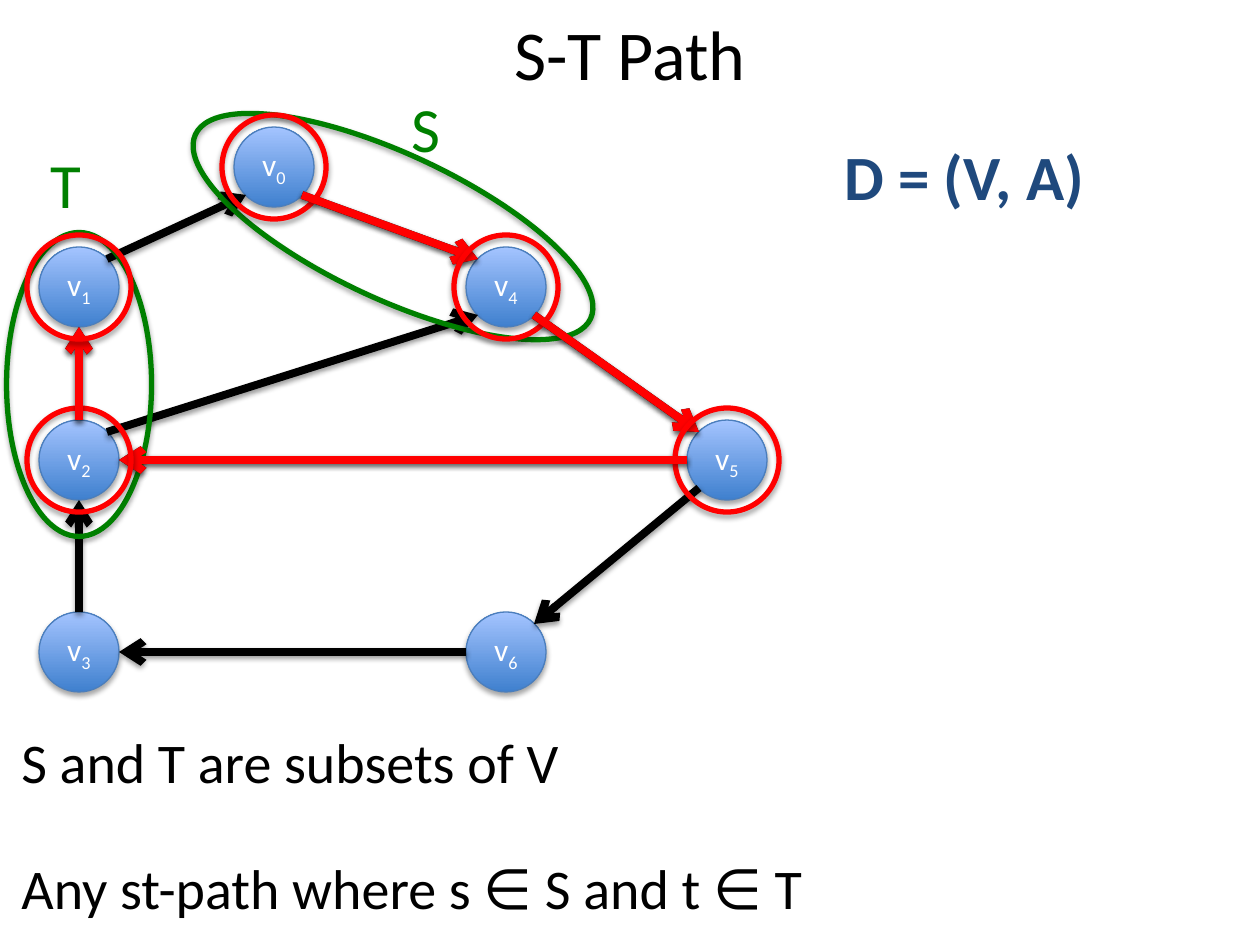
from lxml.etree import SubElement
from pptx import Presentation
from pptx.dml.color import RGBColor
from pptx.enum.shapes import MSO_CONNECTOR, MSO_SHAPE
from pptx.enum.text import MSO_ANCHOR, PP_ALIGN
from pptx.oxml.ns import qn
from pptx.util import Pt

PX = 914400 / 126
BLACK = RGBColor(0x00, 0x00, 0x00)
WHITE = RGBColor(0xFF, 0xFF, 0xFF)
NAVY = RGBColor(0x1F, 0x49, 0x7D)
GREEN = RGBColor(0x00, 0x80, 0x00)
RED = RGBColor(0xFF, 0x00, 0x00)
NODE_LINE = RGBColor(0x4B, 0x7E, 0xBC)
NODE_DARK = RGBColor(0x3F, 0x80, 0xCE)
NODE_LIGHT = RGBColor(0xA4, 0xC4, 0xFF)

NODE_RADIUS = 40
RING_RADIUS = 52
DIAGONAL = 28  # NODE_RADIUS / sqrt(2)
CENTRES = {
    0: (274, 167), 1: (79, 287), 2: (79, 460), 3: (79, 652),
    4: (506, 287), 5: (727, 460), 6: (506, 652),
}
SIDES = {
    "N": (0, -NODE_RADIUS), "S": (0, NODE_RADIUS),
    "W": (-NODE_RADIUS, 0), "E": (NODE_RADIUS, 0),
    "NW": (-DIAGONAL, -DIAGONAL), "NE": (DIAGONAL, -DIAGONAL),
    "SW": (-DIAGONAL, DIAGONAL), "SE": (DIAGONAL, DIAGONAL),
}
# Start node, side it leaves from, end node, side it arrives at
PATH_ARCS = [(0, "SE", 4, "NW"), (4, "SE", 5, "NW"), (5, "W", 2, "E"), (2, "N", 1, "S")]
OTHER_ARCS = [(2, "NE", 4, "SW"), (1, "NE", 0, "SW"), (5, "SW", 6, "NE"),
              (6, "W", 3, "E"), (3, "N", 2, "S")]


def px(*lengths):
    return [round(length * PX) for length in lengths]


def apply(target, values):
    for name, value in values.items():
        setattr(target, name, value)


def add_span(para, text, size, color, bold=False):
    span = para.add_run()
    span.text = text
    apply(span.font, {"name": "Calibri", "size": Pt(size), "bold": bold})
    span.font.color.rgb = color
    return span


def add_shadow(shape, opacity, distance):
    effects = SubElement(shape._element.spPr, qn("a:effectLst"))
    shadow = SubElement(effects, qn("a:outerShdw"), blurRad=str(Pt(3.1)),
                        dist=str(Pt(distance)), dir="5400000", rotWithShape="0")
    color = SubElement(shadow, qn("a:srgbClr"), val="000000")
    SubElement(color, qn("a:alpha"), val=str(opacity * 1000))


def add_label(page, text, frame, size, color=BLACK, bold=False):
    box = page.shapes.add_textbox(*px(*frame))
    box.text_frame.word_wrap = False
    add_span(box.text_frame.paragraphs[0], text, size, color, bold)
    return box


def add_title(page, text):
    box = add_label(page, text, (63, 8, 1134, 89), 40)
    apply(box.text_frame, {"word_wrap": True, "vertical_anchor": MSO_ANCHOR.MIDDLE})
    box.text_frame.paragraphs[0].alignment = PP_ALIGN.CENTER


def add_ellipse(page, frame, color, width=3, rotation=0):
    """Add an unfilled, shadowed ellipse."""
    ellipse = page.shapes.add_shape(MSO_SHAPE.OVAL, *px(*frame))
    ellipse.rotation = rotation
    ellipse.fill.background()
    ellipse.line.color.rgb = color
    ellipse.line.width = Pt(width)
    add_shadow(ellipse, 35, 1.8)
    return ellipse


def add_circle(page, index, radius, color, width=3):
    """Add a circle around the centre of a node."""
    x, y = CENTRES[index]
    return add_ellipse(page, (x - radius, y - radius, 2 * radius, 2 * radius), color, width)


def add_node(page, index):
    node = add_circle(page, index, NODE_RADIUS, NODE_LINE, 0.75)
    node.fill.gradient()
    node.fill.gradient_angle = 90
    for stop, color in zip(node.fill.gradient_stops, (NODE_DARK, NODE_LIGHT)):
        stop.color.rgb = color
    apply(node.text_frame, {
        "margin_left": 0, "margin_right": 0, "margin_top": 0, "margin_bottom": 0,
        "vertical_anchor": MSO_ANCHOR.MIDDLE,
    })
    para = node.text_frame.paragraphs[0]
    para.alignment = PP_ALIGN.CENTER
    add_span(para, "v", 18, WHITE)
    subscript = add_span(para, str(index), 18, WHITE)
    subscript._r.get_or_add_rPr().set("baseline", "-25000")


def add_arc(page, arc, color):
    start, start_side, end, end_side = arc
    points = [centre + offset
              for index, side in ((start, start_side), (end, end_side))
              for centre, offset in zip(CENTRES[index], SIDES[side])]
    arrow = page.shapes.add_connector(MSO_CONNECTOR.STRAIGHT, *px(*points))
    arrow.line.color.rgb = color
    arrow.line.width = Pt(4.5)
    SubElement(arrow.line._get_or_add_ln(), qn("a:tailEnd"), type="arrow")
    add_shadow(arrow, 38, 1.6)


def add_path(page):
    """Ring each node on the S-T path and colour the arcs between them."""
    add_circle(page, PATH_ARCS[0][0], RING_RADIUS, RED)
    for arc in PATH_ARCS:
        add_arc(page, arc, RED)
        add_circle(page, arc[2], RING_RADIUS, RED)


def main():
    deck = Presentation()
    deck.slide_width, deck.slide_height = px(1260, 945)
    page = deck.slides.add_slide(deck.slide_layouts[6])

    add_title(page, "S-T Path")
    add_label(page, "S and T are subsets of V", (9, 721, 645, 81), 32)
    add_label(page, "D = (V, A)", (832, 131, 304, 89), 36, NAVY, bold=True)
    for index in CENTRES:
        add_node(page, index)
    for arc in PATH_ARCS + OTHER_ARCS:
        add_arc(page, arc, BLACK)
    add_label(page, "Any st-path where s ∈ S and t ∈ T", (9, 847, 886, 81), 32)

    add_ellipse(page, (175, 154, 436, 145), GREEN, rotation=205)
    add_ellipse(page, (-73, 312, 304, 145), GREEN, rotation=90)
    add_label(page, "S", (399, 83, 68, 89), 36, GREEN)
    add_label(page, "T", (38, 139, 63, 89), 36, GREEN)
    add_path(page)

    deck.save("out.pptx")


if __name__ == "__main__":
    main()
